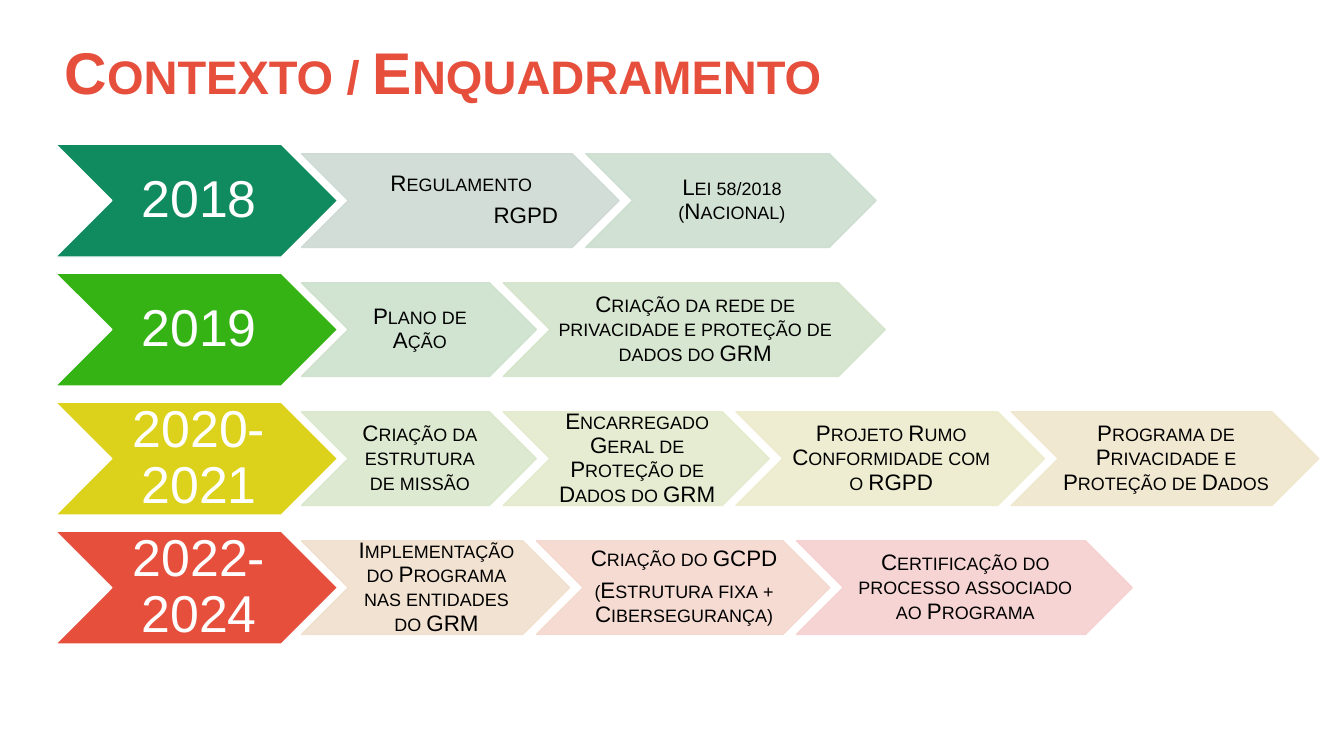
from pptx import Presentation
from pptx.dml.color import RGBColor
from pptx.enum.shapes import MSO_SHAPE
from pptx.enum.text import MSO_ANCHOR, MSO_AUTO_SIZE, PP_ALIGN
from pptx.oxml.ns import qn
from pptx.util import Inches, Pt
from lxml import etree

CHEVRON = MSO_SHAPE.CHEVRON
TOP, MIDDLE = MSO_ANCHOR.TOP, MSO_ANCHOR.MIDDLE
LEFT, CENTER = PP_ALIGN.LEFT, PP_ALIGN.CENTER

TITLE = "Contexto / Enquadramento"
TITLE_COLOUR = "E74F3D"
TIMELINE = [
    ("2018", "108B5F", [
        ("Regulamento\nRGPD", 3.15, "CCDAD2"),
        ("Lei 58/2018 (Nacional)", 2.88, "CCDECF"),
    ]),
    ("2019", "35B315", [
        ("Plano de Ação", 2.33, "CDE1CC"),
        ("Criação da rede de privacidade e proteção de dados do GRM", 3.79, "D3E4CB"),
    ]),
    ("2020-2021", "DCD21B", [
        ("Criação da estrutura de missão", 2.33, "DAE7CB"),
        ("Encarregado Geral de Proteção de Dados do GRM", 2.64, "E3EACC"),
        ("Projeto Rumo Conformidade com o RGPD", 3.06, "EDECCC"),
        ("Programa de Privacidade e Proteção de Dados", 3.05, "EFE6CC"),
    ]),
    ("2022-2024", "E74F3D", [
        ("Implementação do Programa nas entidades do GRM", 2.66, "F1DFCD"),
        ("Criação do GCPD\n(Estrutura fixa + Cibersegurança)", 2.91, "F4D8CE"),
        ("Certificação do processo associado ao Programa", 3.33, "F6D0CF"),
    ]),
]
INDENTS = {"RGPD": 0.64}

YEAR_LEFT, YEAR_WIDTH, YEAR_HEIGHT = 0.55, 2.8, 1.12
FIRST_ROW, ROW_PITCH = 1.43, 1.28
STEP_LEFT, STEP_HEIGHT, STEP_OVERLAP = 2.99, 0.93, 0.33


def rgb(colour):
    return RGBColor.from_string(colour)


def write(frame, text, size, colour, align, anchor, insets, small=True, bold=False):
    frame.text = text
    frame.word_wrap = True
    frame.auto_size = MSO_AUTO_SIZE.NONE
    frame.vertical_anchor = anchor
    frame.margin_left, frame.margin_top, frame.margin_right, frame.margin_bottom = map(Inches, insets)
    for paragraph in frame.paragraphs:
        paragraph.alignment = align
        paragraph.line_spacing = 0.9
        paragraph.space_before = Pt(0)
        paragraph.space_after = Pt(round(0.35 * size, 1))
        if paragraph.text in INDENTS:
            paragraph._p.get_or_add_pPr().set("marL", str(Inches(INDENTS[paragraph.text])))
        for run in paragraph.runs:
            run.font.name = "Arial"
            run.font.size = Pt(size)
            run.font.bold = bold
            run.font.color.rgb = rgb(colour)
            if small:
                run._r.get_or_add_rPr().set("cap", "small")


def add_chevron(slide, left, top, width, height, colour, outline, opacity=100):
    chevron = slide.shapes.add_shape(CHEVRON, *map(Inches, (left, top, width, height)))
    chevron.shadow.inherit = False
    chevron.fill.solid()
    chevron.fill.fore_color.rgb = rgb(colour)
    chevron.line.color.rgb = rgb(outline)
    chevron.line.width = Pt(1)
    if opacity < 100:
        for solid in chevron._element.spPr.iter(qn("a:srgbClr")):
            etree.SubElement(solid, qn("a:alpha")).set("val", str(opacity * 1000))
    return chevron.text_frame


def main():
    deck = Presentation()
    deck.slide_width, deck.slide_height = Inches(13.33), Inches(7.5)
    slide = deck.slides.add_slide(deck.slide_layouts[5])

    title = slide.shapes.title
    title.left, title.top, title.width, title.height = map(Inches, (0.54, 0.38, 11.09, 1.45))
    write(title.text_frame, TITLE, 42, TITLE_COLOUR, LEFT, TOP, (0.1, 0.05, 0.1, 0.05), bold=True)

    for row, (year, year_colour, steps) in enumerate(TIMELINE):
        top = FIRST_ROW + row * ROW_PITCH
        year_frame = add_chevron(slide, YEAR_LEFT, top, YEAR_WIDTH, YEAR_HEIGHT, year_colour, "FFFFFF")
        write(year_frame, year, 37, "FFFFFF", CENTER, MIDDLE, (0.05, 0.03, 0, 0.03), small=False)

        step_top = top + (YEAR_HEIGHT - STEP_HEIGHT) / 2
        left = STEP_LEFT
        for step, width, colour in steps:
            step_frame = add_chevron(slide, left, step_top, width, STEP_HEIGHT, colour, colour, 90)
            write(step_frame, step, 16, "000000", CENTER, MIDDLE, (0.02, 0.01, 0, 0.01))
            left += width - STEP_OVERLAP

    deck.save("out.pptx")


if __name__ == "__main__":
    main()
